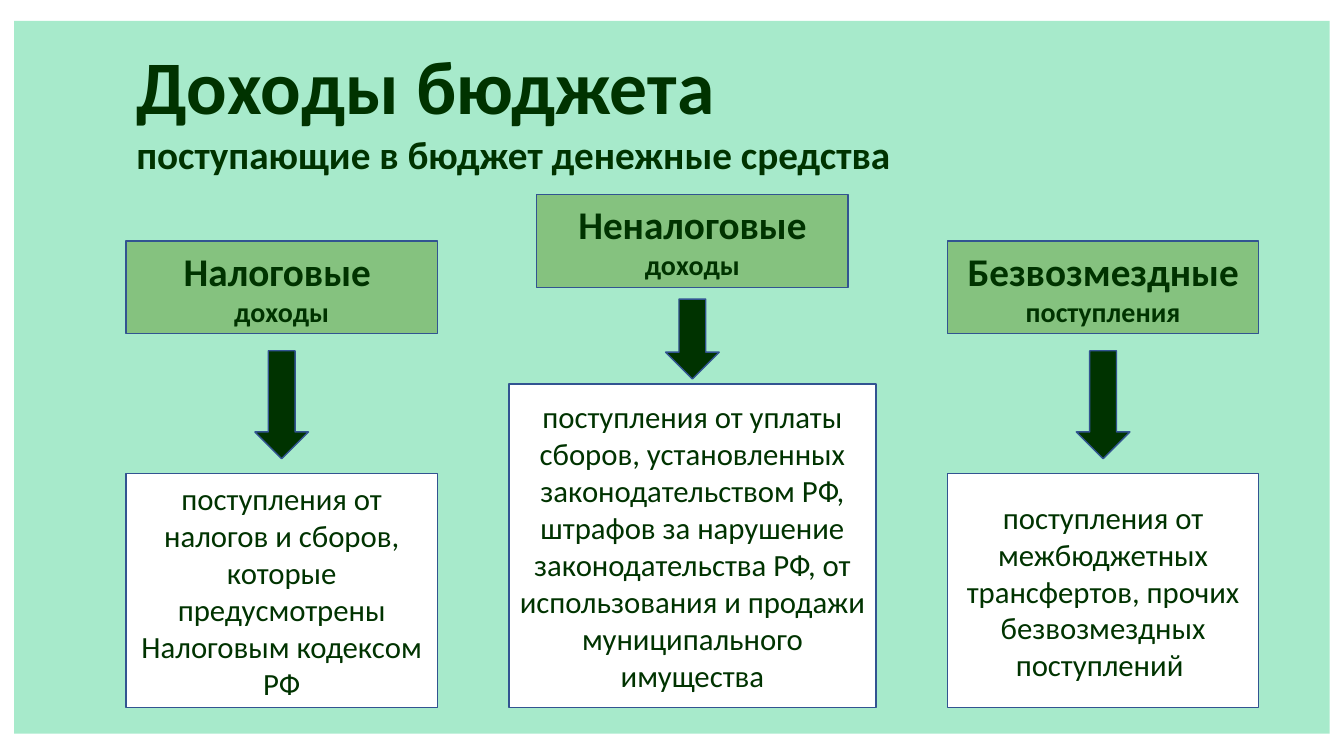
import dataclasses

import pptx
import pptx.dml.color
import pptx.enum.shapes
import pptx.enum.text
import pptx.util

Cm = pptx.util.Cm
Shape = pptx.enum.shapes.MSO_SHAPE
Align = pptx.enum.text.PP_ALIGN
Anchor = pptx.enum.text.MSO_ANCHOR


@dataclasses.dataclass(frozen=True)
class Theme:
    font: str = "Calibri"
    panel: str = "A7EACB"
    header: str = "85C27F"
    card: str = "FFFFFF"
    dark: str = "003300"
    outline: str = "325491"
    title_size: int = 54
    heading_size: int = 28
    caption_size: int = 20
    body_size: int = 22


def rgb(value):
    return pptx.dml.color.RGBColor.from_string(value)


class PageBuilder:
    def __init__(self, page, theme):
        self.page = page
        self.theme = theme

    def shape(self, kind, left, top, width, height, fill, outlined=True):
        box = self.page.shapes.add_shape(
            kind, Cm(left), Cm(top), Cm(width), Cm(height))
        box.shadow.inherit = False
        box.fill.solid()
        box.fill.fore_color.rgb = rgb(fill)
        if outlined:
            box.line.color.rgb = rgb(self.theme.outline)
            box.line.width = pptx.util.Pt(1)
        else:
            box.line.fill.background()
        return box

    def set_text(self, frame, paragraphs, align, bold):
        """Fill the frame; each paragraph is a list of (text, size) pairs."""
        frame.word_wrap = True
        for index, spans in enumerate(paragraphs):
            para = frame.paragraphs[0] if index == 0 else frame.add_paragraph()
            para.alignment = align
            for text, size in spans:
                span = para.add_run()
                span.text = text
                span.font.name = self.theme.font
                span.font.size = pptx.util.Pt(size)
                span.font.bold = bold
                span.font.color.rgb = rgb(self.theme.dark)

    def panel(self, left, top, width, height):
        return self.shape(Shape.RECTANGLE, left, top, width, height,
                          self.theme.panel, outlined=False)

    def title(self, text, subtitle, behind, left, top, width, height):
        """Place the title placeholder in front of the shape behind it."""
        box = self.page.shapes.title
        behind.element.addnext(box.element)
        box.left, box.top = Cm(left), Cm(top)
        box.width, box.height = Cm(width), Cm(height)
        frame = box.text_frame
        frame.vertical_anchor = Anchor.TOP
        frame.auto_size = pptx.enum.text.MSO_AUTO_SIZE.SHAPE_TO_FIT_TEXT
        self.set_text(frame, [[(text, self.theme.title_size)],
                              [(subtitle, self.theme.heading_size)]],
                      Align.LEFT, True)

    def text_box(self, center, top, width, height, fill, paragraphs, bold):
        box = self.shape(Shape.RECTANGLE, center - width / 2, top, width,
                         height, fill)
        box.text_frame.vertical_anchor = Anchor.MIDDLE
        self.set_text(box.text_frame, paragraphs, Align.CENTER, bold)

    def header(self, center, top, paragraphs):
        self.text_box(center, top, COLUMN_WIDTH, 2.34, self.theme.header,
                      paragraphs, True)

    def arrow(self, center, top, height):
        self.shape(Shape.DOWN_ARROW, center - ARROW_WIDTH / 2, top,
                   ARROW_WIDTH, height, self.theme.dark)

    def card(self, center, top, width, text):
        self.text_box(center, top, width, CARD_BOTTOM - top, self.theme.card,
                      [[(text, self.theme.body_size)]], False)


COLUMN_WIDTH = 7.85
ARROW_WIDTH = 1.35
CARD_BOTTOM = 17.83
FIRST_CENTER, COLUMN_STEP = 7.1, 10.35


@dataclasses.dataclass(frozen=True)
class Level:
    header_top: float
    arrow_top: float
    arrow_height: float
    card_top: float
    card_width: float


def main():
    theme = Theme()
    side = Level(6.07, 8.84, 2.72, 11.94, COLUMN_WIDTH)
    middle = Level(4.9, 7.54, 2.01, 9.68, 9.25)

    def heading(text):
        return text, theme.heading_size

    def caption(text):
        return text, theme.caption_size

    incomes = [
        (side, [[heading("Налоговые ")], [caption("доходы")]],
         "поступления от налогов и сборов, которые предусмотрены "
         "Налоговым кодексом РФ"),
        (middle, [[heading("Неналоговые "), caption("доходы")]],
         "поступления от уплаты сборов, установленных законодательством РФ, "
         "штрафов за нарушение законодательства РФ, от использования и "
         "продажи муниципального имущества"),
        (side, [[heading("Безвозмездные "), caption("поступления")]],
         "поступления от межбюджетных трансфертов, прочих безвозмездных "
         "поступлений "),
    ]

    deck = pptx.Presentation()
    deck.slide_width, deck.slide_height = Cm(33.87), Cm(19.05)
    title_only = deck.slide_layouts[5]
    builder = PageBuilder(deck.slides.add_slide(title_only), theme)

    panel = builder.panel(0.36, 0.53, 33.15, 17.96)
    builder.title("Доходы бюджета", "поступающие в бюджет денежные средства",
                  panel, 3.18, 0.86, 28.52, 3.76)
    for index, (level, header, text) in enumerate(incomes):
        center = FIRST_CENTER + index * COLUMN_STEP
        builder.header(center, level.header_top, header)
        builder.arrow(center, level.arrow_top, level.arrow_height)
        builder.card(center, level.card_top, level.card_width, text)

    deck.save("out.pptx")


if __name__ == "__main__":
    main()
